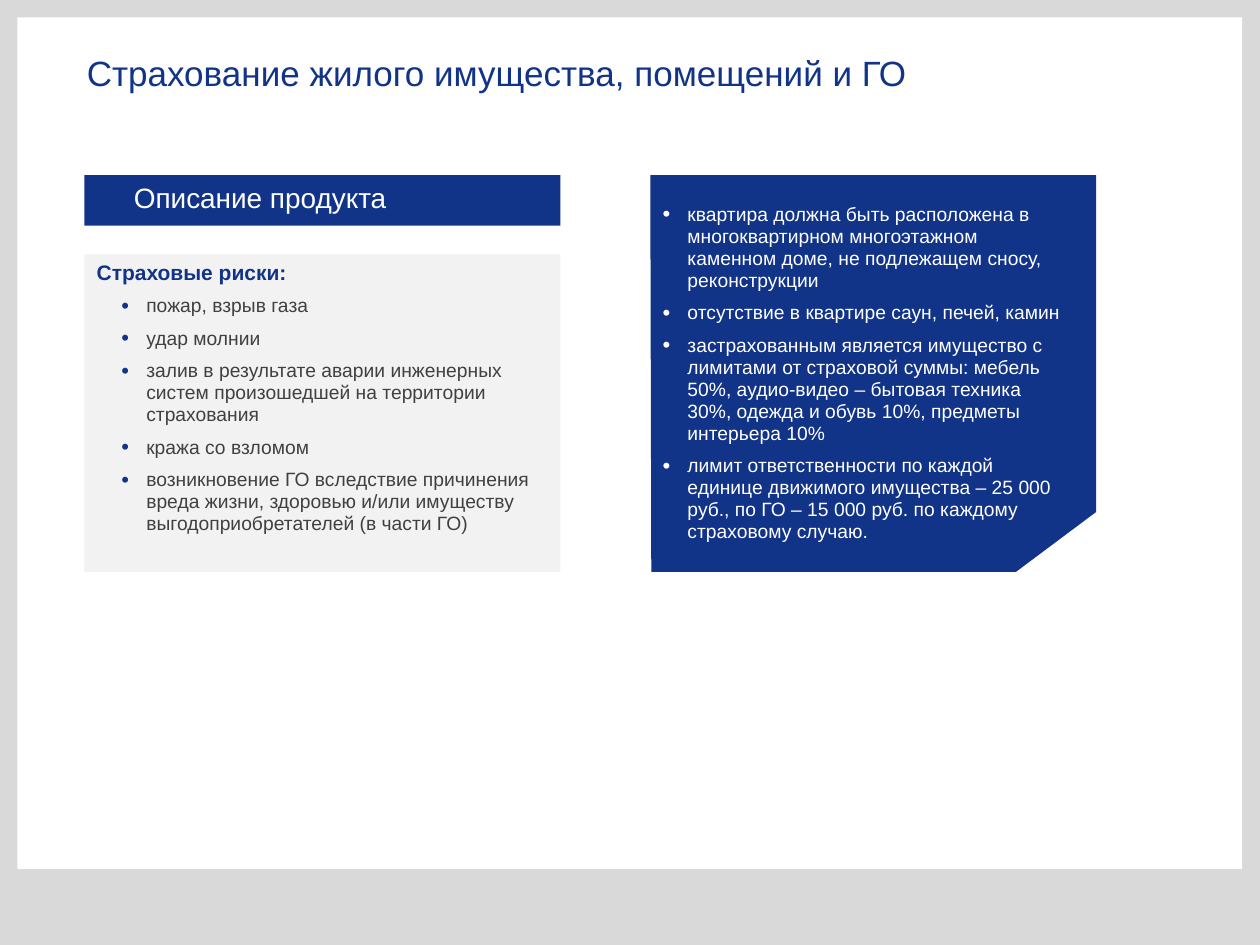
import pptx
import pptx.dml.color
import pptx.enum.shapes
import pptx.enum.text
import pptx.oxml
import pptx.oxml.ns
import pptx.util
from pptx.util import Cm

RGBColor = pptx.dml.color.RGBColor
Anchor = pptx.enum.text.MSO_ANCHOR

NAVY = RGBColor(0x11, 0x33, 0x88)
WHITE = RGBColor(0xFF, 0xFF, 0xFF)
FRAME_GRAY = RGBColor(0xD9, 0xD9, 0xD9)
PANEL_GRAY = RGBColor(0xF2, 0xF2, 0xF2)
TEXT_GRAY = RGBColor(0x40, 0x40, 0x40)

INDENT = Cm(0.5)
LEFT, TOP, BOTTOM = Cm(1.7), Cm(3.53), Cm(11.53)
COLUMN_WIDTH = Cm(9.6)

RISKS = [
    "пожар, взрыв газа",
    "удар молнии",
    "залив в результате аварии инженерных систем произошедшей на территории страхования",
    "кража со взломом",
    "возникновение ГО вследствие причинения вреда жизни, здоровью и/или имуществу "
    "выгодоприобретателей (в части ГО)",
]
CONDITIONS = [
    "квартира должна быть расположена в многоквартирном многоэтажном каменном доме, "
    "не подлежащем сносу, реконструкции",
    "отсутствие в квартире саун, печей, камин",
    "застрахованным является имущество с лимитами от страховой суммы: мебель 50%, "
    "аудио-видео – бытовая техника 30%, одежда и обувь 10%, предметы интерьера 10%",
    "лимит ответственности по каждой единице движимого имущества – 25 000 руб., "
    "по ГО – 15 000 руб. по каждому страховому случаю.",
]


class ProductSlide:
    font_name = "Arial"

    def __init__(self, presentation):
        self.slide = presentation.slides.add_slide(presentation.slide_layouts[5])

    def paint(self, shape, color):
        shape.shadow.inherit = False
        shape.fill.solid()
        shape.fill.fore_color.rgb = color
        shape.line.fill.background()
        return shape

    def panel(self, left, top, width, height, color):
        rectangle = pptx.enum.shapes.MSO_SHAPE.RECTANGLE
        return self.paint(
            self.slide.shapes.add_shape(rectangle, left, top, width, height), color)

    def backdrop(self, left, top, width, height, color):
        panel = self.panel(left, top, width, height, color)
        self.slide.shapes.title._element.addprevious(panel._element)

    def outline(self, points, color):
        builder = self.slide.shapes.build_freeform(*points[0])
        builder.add_line_segments(points[1:], close=True)
        return self.paint(builder.convert_to_shape(), color)

    def frame(self, shape, anchor, left=Cm(0.25), right=Cm(0.25), edge=Cm(0.13)):
        text_frame = shape.text_frame
        text_frame.word_wrap = True
        text_frame.vertical_anchor = anchor
        text_frame.margin_left, text_frame.margin_right = left, right
        text_frame.margin_top = text_frame.margin_bottom = edge
        return text_frame

    def set_text(self, paragraph, text, size, color, spacing=0.95, bold=False):
        paragraph.text = text
        paragraph.alignment = pptx.enum.text.PP_ALIGN.LEFT
        paragraph.line_spacing = spacing
        paragraph.font.name = self.font_name
        paragraph.font.size = pptx.util.Pt(size)
        paragraph.font.bold = bold
        paragraph.font.color.rgb = color

    def title(self, text):
        title = self.slide.shapes.title
        title.left, title.top, title.width, title.height = (
            Cm(1.5), Cm(0.81), Cm(22.86), Cm(1.3))
        text_frame = self.frame(title, Anchor.MIDDLE)
        self.set_text(text_frame.paragraphs[0], text, 20, NAVY, spacing=1.0)

    def bullets(self, text_frame, items, margin, color, bullet_color):
        for item in items:
            first = not text_frame.text
            paragraph = text_frame.paragraphs[0] if first else text_frame.add_paragraph()
            paragraph.level = 1
            properties = paragraph._p.get_or_add_pPr()
            properties.set("marL", str(margin))
            properties.set("indent", str(-INDENT))
            namespace = pptx.oxml.ns.nsdecls("a")
            for element in (
                f'<a:buClr {namespace}><a:srgbClr val="{bullet_color}"/></a:buClr>',
                f'<a:buSzPct {namespace} val="115000"/>',
                f'<a:buFont {namespace} typeface="{self.font_name}"/>',
                f'<a:buChar {namespace} char="•"/>',
            ):
                properties.append(pptx.oxml.parse_xml(element))
            self.set_text(paragraph, item, 11, color)
            paragraph.space_before = pptx.util.Pt(0 if first else 6)


def main():
    presentation = pptx.Presentation()
    presentation.slide_width, presentation.slide_height = Cm(25.4), Cm(19.05)
    product = ProductSlide(presentation)

    product.backdrop(0, 0, Cm(25.4), Cm(19.05), FRAME_GRAY)
    product.backdrop(Cm(0.35), Cm(0.35), Cm(24.69), Cm(17.17), WHITE)
    product.title("Страхование жилого имущества, помещений и ГО")

    risks_top = Cm(5.13)
    risks = product.panel(LEFT, risks_top, COLUMN_WIDTH, BOTTOM - risks_top, PANEL_GRAY)
    risks_text = product.frame(risks, Anchor.TOP)
    product.set_text(risks_text.paragraphs[0], "Страховые риски:", 12, NAVY, bold=True)
    product.bullets(risks_text, RISKS, 2 * INDENT, TEXT_GRAY, NAVY)

    heading = product.panel(LEFT, TOP, COLUMN_WIDTH, Cm(1.02), NAVY)
    heading_text = product.frame(heading, Anchor.MIDDLE, Cm(1), Cm(1), 0)
    product.set_text(heading_text.paragraphs[0], "Описание продукта", 16, WHITE, spacing=0.8)

    conditions_left, conditions_right = Cm(13.11), Cm(22.1)
    conditions = product.outline([
        (conditions_left, TOP),
        (conditions_right, TOP),
        (conditions_right, Cm(10.32)),
        (Cm(20.48), BOTTOM),
        (Cm(13.13), BOTTOM),
    ], NAVY)
    conditions_text = product.frame(conditions, Anchor.MIDDLE, right=Cm(0.6))
    product.bullets(conditions_text, CONDITIONS, INDENT, WHITE, WHITE)

    presentation.save("out.pptx")


if __name__ == "__main__":
    main()
